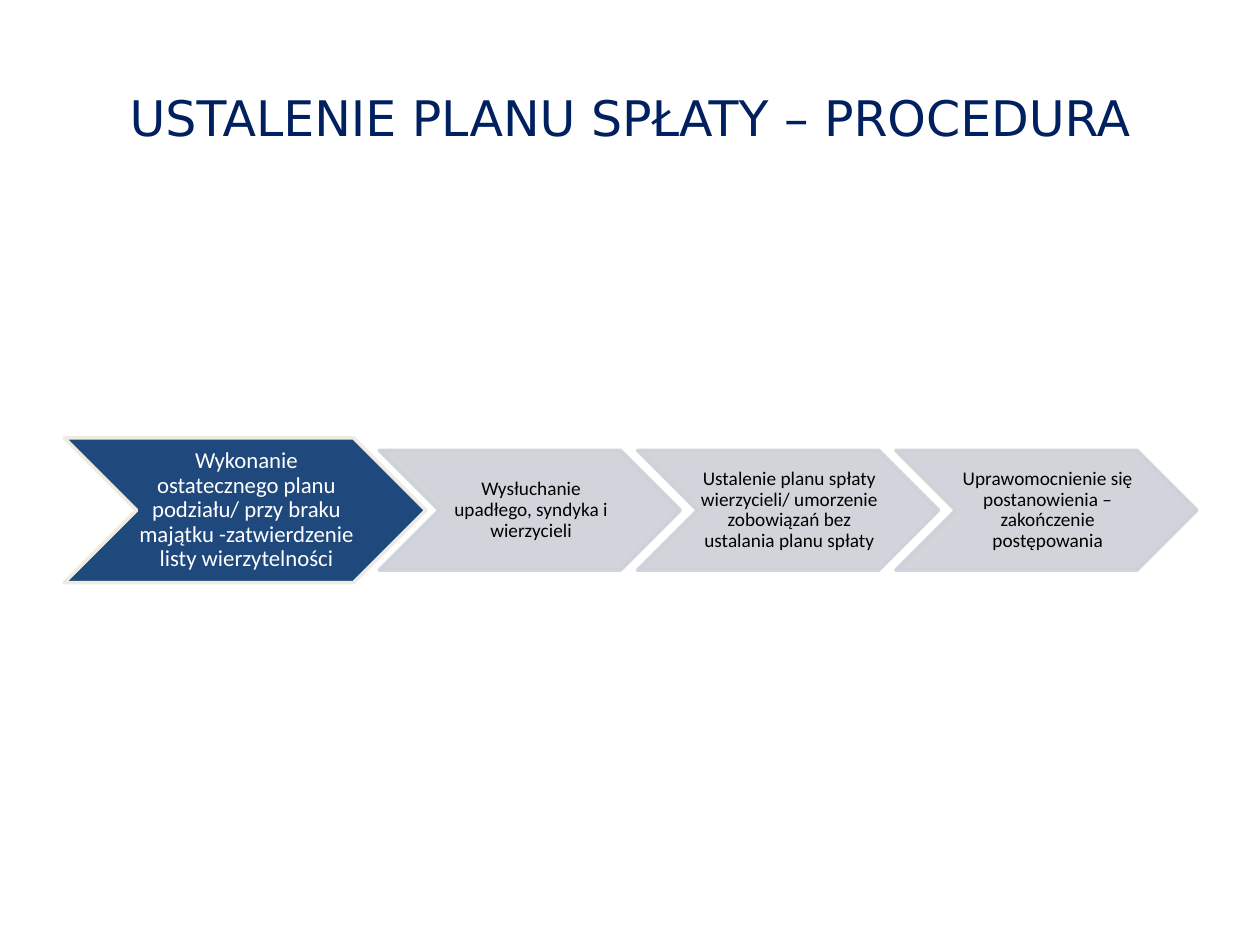
from lxml.etree import SubElement
from pptx import Presentation
from pptx.dml.color import RGBColor
from pptx.enum.shapes import MSO_SHAPE
from pptx.enum.text import MSO_ANCHOR, PP_ALIGN
from pptx.oxml.ns import qn
from pptx.util import Inches, Pt

MIDDLE = 4.05
FIRST_STEP = "Wykonanie ostatecznego planu podziału/ przy braku majątku -zatwierdzenie listy wierzytelności"
LATER_STEPS = [
    "Wysłuchanie upadłego, syndyka i wierzycieli",
    "Ustalenie planu spłaty wierzycieli/ umorzenie zobowiązań bez ustalania planu spłaty",
    "Uprawomocnienie się postanowienia – zakończenie postępowania",
]


def color(value):
    return RGBColor.from_string(value)


def set_opacity(shape, percent):
    for element in shape.element.spPr.iter(qn("a:srgbClr")):
        SubElement(element, qn("a:alpha"), val=str(percent * 1000))


def add_text(shapes, text, box, font_name, size, font_color):
    shape = shapes.add_textbox(*map(Inches, box))
    frame = shape.text_frame
    frame.word_wrap = True
    frame.vertical_anchor = MSO_ANCHOR.MIDDLE
    paragraph = frame.paragraphs[0]
    paragraph.alignment = PP_ALIGN.CENTER
    run = paragraph.add_run()
    run.text = text
    run.font.name = font_name
    run.font.size = Pt(size)
    run.font.color.rgb = color(font_color)
    return frame


def add_chevron(shapes, left, width, height, fill, line):
    shape = shapes.add_shape(
        MSO_SHAPE.CHEVRON, Inches(left), Inches(MIDDLE - height / 2), Inches(width), Inches(height)
    )
    shape.shadow.inherit = False
    shape.fill.solid()
    shape.fill.fore_color.rgb = color(fill)
    shape.line.color.rgb = color(line)
    shape.line.width = Pt(2)
    return shape


def add_step_text(shapes, text, left, width, height, size, font_color):
    box = (left + width * 0.2, MIDDLE - height / 2, width * 0.6, height)
    frame = add_text(shapes, text, box, "Calibri", size, font_color)
    frame.margin_left = Inches(0.02)
    frame.margin_right = 0
    frame.margin_top = frame.margin_bottom = Inches(0.01)
    frame.paragraphs[0].line_spacing = 0.9


def main():
    presentation = Presentation()
    presentation.slide_width = Inches(10)
    presentation.slide_height = Inches(7.5)
    slide = presentation.slides.add_slide(presentation.slide_layouts[6])
    add_text(
        slide.shapes, "USTALENIE PLANU SPŁATY – PROCEDURA", (0.5, 0.3, 9, 1.25), "DejaVu Sans", 28, "002060"
    )

    process = slide.shapes.add_group_shape().shapes
    add_chevron(process, 0.51, 2.87, 1.15, "1F497D", "EEECE1")
    add_step_text(process, FIRST_STEP, 0.51, 2.87, 1.15, 13, "FFFFFF")
    for index, text in enumerate(LATER_STEPS):
        left = 3.01 + index * 2.05
        chevron = add_chevron(process, left, 2.39, 0.95, "CDD0D7", "CDD0D7")
        set_opacity(chevron, 90)
        add_step_text(process, text, left, 2.39, 0.95, 11, "000000")

    presentation.save("out.pptx")


if __name__ == "__main__":
    main()
